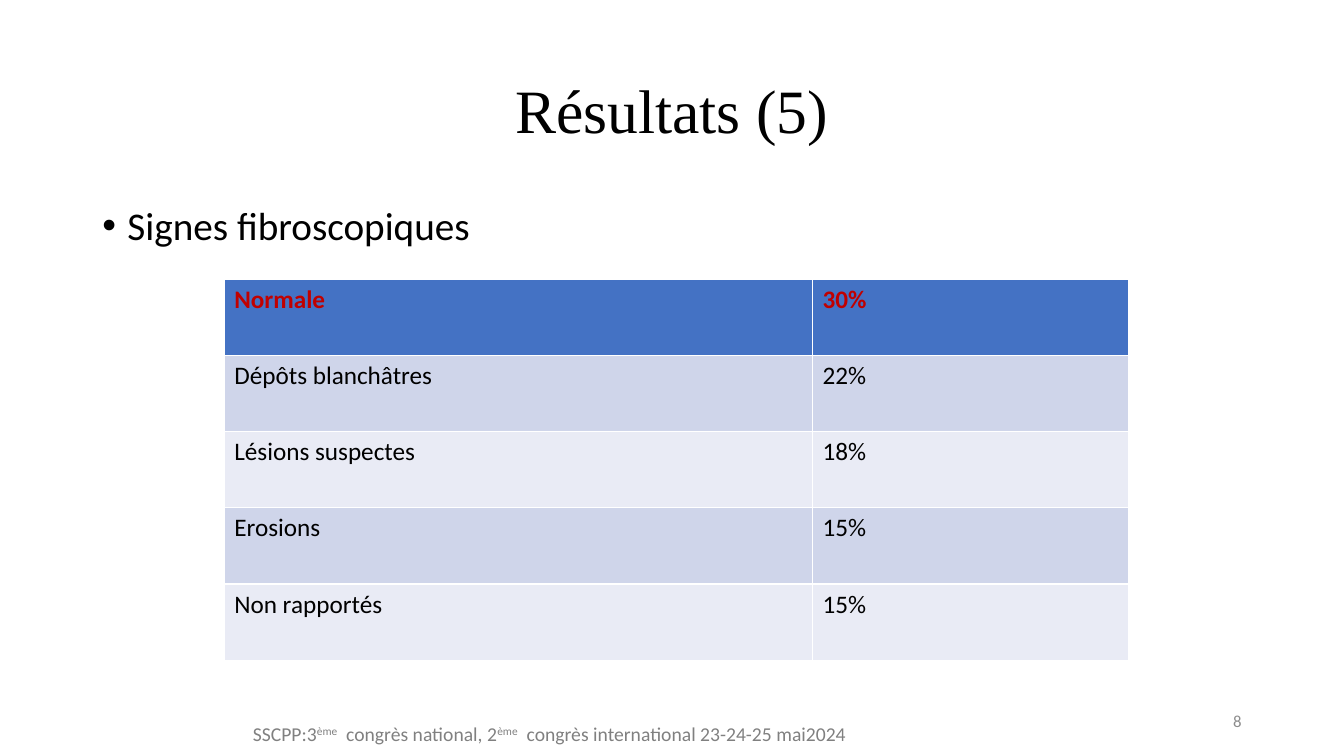
from lxml import etree
from pptx import Presentation
from pptx.dml.color import RGBColor
from pptx.enum.text import MSO_ANCHOR, PP_ALIGN
from pptx.oxml.ns import qn
from pptx.util import Pt

CENTER, RIGHT = PP_ALIGN.CENTER, PP_ALIGN.RIGHT
TOP, MIDDLE = MSO_ANCHOR.TOP, MSO_ANCHOR.MIDDLE
TITLE_ONLY = 5

COLORS = {
    "text": "000000",
    "highlight": "C00000",
    "header": "4472C4",
    "band_dark": "CFD5EA",
    "band_light": "E9EBF5",
    "footer": "808080",
    "number": "8C8C8C",
}

SIGNS = [
    ("Normale", "30%"),
    ("Dépôts blanchâtres", "22%"),
    ("Lésions suspectes", "18%"),
    ("Erosions", "15%"),
    ("Non rapportés", "15%"),
]

# Each footer run: text and whether it is raised
FOOTER = [
    ("SSCPP:3", False),
    ("ème", True),
    ("  congrès national, 2", False),
    ("ème", True),
    ("  congrès international 23-24-25 mai2024", False),
]


def rgb(name):
    return RGBColor.from_string(COLORS[name])


def format_font(font, color, **values):
    for key, value in {"name": "Calibri", **values}.items():
        setattr(font, key, value)
    font.color.rgb = rgb(color)


def format_paragraph(p, **values):
    for key, value in values.items():
        setattr(p, key, value)


def place(sp, left, top, width, height):
    sp.left, sp.top, sp.width, sp.height = map(Pt, (left, top, width, height))


def add_text(s, box, runs, color, size, anchor=TOP, **paragraph):
    tf = s.shapes.add_textbox(*map(Pt, box)).text_frame
    tf.word_wrap = True
    tf.vertical_anchor = anchor
    p = tf.paragraphs[0]
    format_paragraph(p, **paragraph)
    for text, raised in runs:
        r = p.add_run()
        r.text = text
        format_font(r.font, color, size=Pt(size))
        if raised:
            r._r.get_or_add_rPr().set("baseline", "30000")
    return p


def add_bullet(p, indent):
    pPr = p._p.get_or_add_pPr()
    pPr.set("marL", str(Pt(indent)))
    pPr.set("indent", str(-Pt(indent)))
    etree.SubElement(pPr, qn("a:buFont")).set("typeface", "Arial")
    etree.SubElement(pPr, qn("a:buChar")).set("char", "•")


def set_title(s, text):
    sp = s.shapes.title
    place(sp, 66, 28.8, 828, 104.4)
    tf = sp.text_frame
    tf.text = text
    tf.vertical_anchor = MIDDLE
    p = tf.paragraphs[0]
    format_paragraph(p, alignment=CENTER, line_spacing=0.9)
    format_font(p.runs[0].font, "text", name="Times New Roman", size=Pt(44))


def add_signs_table(s, left, top, widths, row_height):
    height = row_height * len(SIGNS)
    frame = s.shapes.add_table(len(SIGNS), len(widths), Pt(left), Pt(top),
                               Pt(sum(widths)), Pt(height))
    table = frame.table
    for column, width in zip(table.columns, widths):
        column.width = Pt(width)
    for i, row in enumerate(SIGNS):
        is_header = i == 0
        fill = "header" if is_header else ("band_light", "band_dark")[i % 2]
        color = "highlight" if is_header else "text"
        for j, text in enumerate(row):
            cell = table.cell(i, j)
            cell.fill.solid()
            cell.fill.fore_color.rgb = rgb(fill)
            cell.text = text
            r = cell.text_frame.paragraphs[0].runs[0]
            format_font(r.font, color, size=Pt(18), bold=is_header)


def main():
    prs = Presentation()
    prs.slide_width, prs.slide_height = Pt(960), Pt(540)
    s = prs.slides.add_slide(prs.slide_layouts[TITLE_ONLY])

    # Title and heading of the list
    set_title(s, "Résultats (5)")
    p = add_text(s, (66, 144, 828, 342.7), [("Signes fibroscopiques", False)],
                 "text", 28, line_spacing=0.9)
    add_bullet(p, 18)

    # Table of signs
    add_signs_table(s, 160.2, 199.6, (420.2, 226), 54.4)

    # Footer and slide number
    add_text(s, (173.5, 511.9, 645.8, 24.2), FOOTER, "footer", 14)
    add_text(s, (678, 500.5, 216, 28.8), [("8", False)], "number", 12,
             anchor=MIDDLE, alignment=RIGHT)

    prs.save("out.pptx")


if __name__ == "__main__":
    main()
